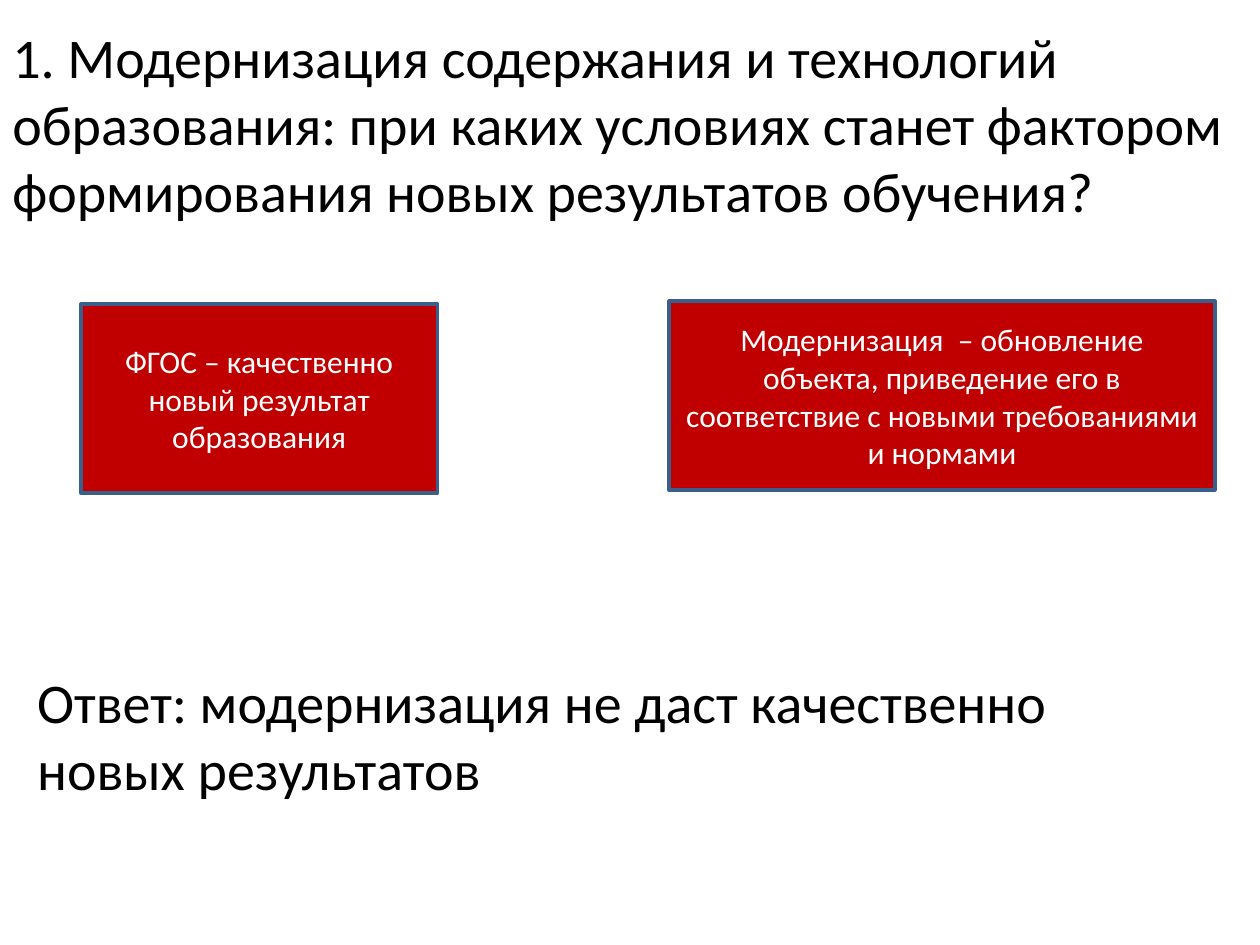
from pptx import Presentation
from pptx import util as u
from pptx.dml.color import RGBColor
from pptx.enum import shapes, text

HUES = {"ink": "000000", "red": "C00000", "edge": "3A5F8C", "white": "FFFFFF"}


def hue(name):
    return RGBColor.from_string(HUES[name])


def place(left, top, width, height):
    return [u.Cm(n) for n in (left, top, width, height)]


def write(shape, words, size, color, align, anchor):
    frame = shape.text_frame
    form = {"word_wrap": True, "vertical_anchor": anchor}
    for key, value in form.items():
        setattr(frame, key, value)
    para = frame.paragraphs[0]
    para.alignment = align
    run = para.add_run()
    run.text = words
    form = {"name": "Calibri", "size": u.Pt(size)}
    for key, value in form.items():
        setattr(run.font, key, value)
    run.font.color.rgb = hue(color)


def add_text(slide, words, spot):
    box = slide.shapes.add_textbox(*place(*spot))
    write(box, words, 32, "ink", text.PP_ALIGN.LEFT, text.MSO_ANCHOR.TOP)
    return box


def add_card(slide, words, spot):
    card = slide.shapes.add_shape(shapes.MSO_SHAPE.RECTANGLE, *place(*spot))
    card.shadow.inherit = False
    card.fill.solid()
    card.fill.fore_color.rgb = hue("red")
    card.line.color.rgb = hue("edge")
    card.line.width = u.Pt(2)
    write(card, words, 18, "white", text.PP_ALIGN.CENTER, text.MSO_ANCHOR.MIDDLE)


def main():
    deck = Presentation()
    deck.slide_width, deck.slide_height = u.Cm(25.4), u.Cm(19.05)
    slide = deck.slides.add_slide(deck.slide_layouts[6])

    # Question
    add_text(slide, "1. Модернизация содержания и технологий образования: "
             "при каких условиях станет фактором формирования новых "
             "результатов обучения?", (0, 0.33, 25.4, 5.21))

    # Two notions set side by side
    add_card(slide, "ФГОС – качественно новый результат образования",
             (1.63, 6.13, 7.19, 3.81))
    add_card(slide, "Модернизация  – обновление объекта, приведение его в "
             "соответствие с новыми требованиями и нормами",
             (13.49, 6.07, 11, 3.81))

    # Answer
    reply = add_text(slide, "Ответ: модернизация не даст качественно новых "
                     "результатов", (0.5, 13.33, 22.6, 3))
    reply.text_frame.auto_size = text.MSO_AUTO_SIZE.SHAPE_TO_FIT_TEXT

    deck.save("out.pptx")


if __name__ == "__main__":
    main()
